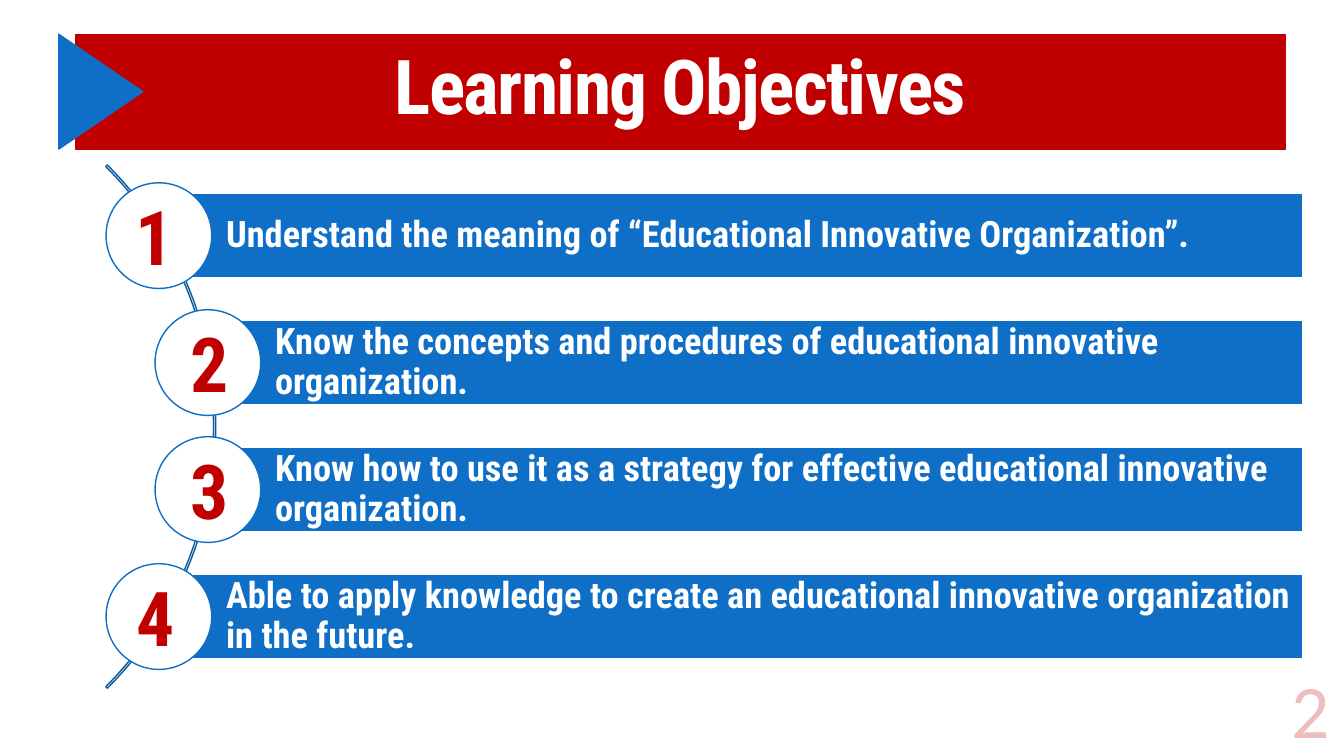
from lxml.etree import SubElement
from pptx import Presentation
from pptx.dml.color import RGBColor
from pptx.enum.shapes import MSO_SHAPE
from pptx.enum.text import MSO_ANCHOR, MSO_AUTO_SIZE, PP_ALIGN
from pptx.oxml.ns import qn
from pptx.util import Pt

HUES = {"red": "C00000", "blue": "0F6FC6", "navy": "0C599F", "white": "FFFFFF"}
FONT = "Roboto Condensed"


def write(shape, text, size=54, hue="white", font=FONT, bold=True, align=PP_ALIGN.CENTER,
          anchor=MSO_ANCHOR.MIDDLE, lead=1.0, pads=(7.2, 3.6, 7.2, 3.6)):
    """Fill a shape with one formatted paragraph and return its run; pads go left, top, right, bottom."""
    frame = shape.text_frame
    frame.word_wrap = True
    frame.auto_size = MSO_AUTO_SIZE.NONE
    frame.vertical_anchor = anchor
    frame.margin_left, frame.margin_top, frame.margin_right, frame.margin_bottom = map(Pt, pads)
    para = frame.paragraphs[0]
    para.alignment = align
    para.line_spacing = lead
    run = para.add_run()
    run.text = text
    run.font.name = font
    run.font.size = Pt(size)
    run.font.bold = bold
    run.font.color.rgb = RGBColor.from_string(HUES[hue])
    return run


def draw(kind, left, top, width, height, line, fill=None, weight=1):
    shape = slide.shapes.add_shape(kind, Pt(left), Pt(top), Pt(width), Pt(height))
    shape.shadow.inherit = False
    if fill:
        shape.fill.solid()
        shape.fill.fore_color.rgb = RGBColor.from_string(HUES[fill])
    else:
        shape.fill.background()
    shape.line.color.rgb = RGBColor.from_string(HUES[line])
    shape.line.width = Pt(weight)
    return shape


deck = Presentation()
deck.slide_width, deck.slide_height = Pt(960), Pt(540)
slide = deck.slides.add_slide(deck.slide_layouts[5])

# Title banner
title = slide.shapes.title
title.left, title.top, title.width, title.height = Pt(54), Pt(24.5), Pt(864), Pt(82)
title.fill.solid()
title.fill.fore_color.rgb = RGBColor.from_string(HUES["red"])
title.line.color.rgb = RGBColor.from_string(HUES["red"])
title.line.width = Pt(0.75)
run = write(title, "Learning Objectives", lead=0.85)
run.font._element.set("spc", "-120")

flag = draw(MSO_SHAPE.ISOSCELES_TRIANGLE, 31, 35.5, 82, 60, "blue", "blue")
flag.rotation = 90

# Curve that links the numbers
curve = draw(MSO_SHAPE.BLOCK_ARC, -374.4, 40.5, 528.5, 528.5, "navy")
for spot, value in enumerate((189, 27, 0.003)):
    curve.adjustments[spot] = value

# Objectives: bar left edge, number centre, wording
GOALS = [
    (113.5, 110.5, "Understand the meaning of “Educational Innovative Organization”."),
    (148.5, 149.5, "Know the concepts and procedures of educational innovative organization."),
    (148.5, 149.5, "Know how to use it as a strategy for effective educational innovative organization."),
    (113.5, 111, "Able to apply knowledge to create an educational innovative organization in the future."),
]
RIGHT, FIRST, STEP = 930.5, 168.3, 90.7
BAR, DISC, BOX = 60.4, 75.5, 120
for row, (left, centre, goal) in enumerate(GOALS):
    middle = FIRST + row * STEP
    bar = draw(MSO_SHAPE.RECTANGLE, left, middle - BAR / 2, RIGHT - left, BAR, "white", "blue")
    write(bar, goal, size=26, align=PP_ALIGN.LEFT, lead=0.9, pads=(48, 5, 5, 5))
    draw(MSO_SHAPE.OVAL, left - DISC / 2, middle - DISC / 2, DISC, DISC, "blue", "white")
    label = slide.shapes.add_textbox(Pt(centre - BOX / 2), Pt(middle - 36.5), Pt(BOX), Pt(72.7))
    write(label, str(row + 1), hue="red", anchor=MSO_ANCHOR.TOP)

# Faded page number
page = slide.shapes.add_textbox(Pt(726.5), Pt(432), Pt(230.5), Pt(110))
run = write(page, "2", hue="red", font="Calibri", bold=False,
            align=PP_ALIGN.RIGHT, anchor=MSO_ANCHOR.BOTTOM)
tint = run.font._element.find(".//" + qn("a:srgbClr"))
SubElement(tint, qn("a:alpha")).set("val", "25000")

deck.save("out.pptx")
